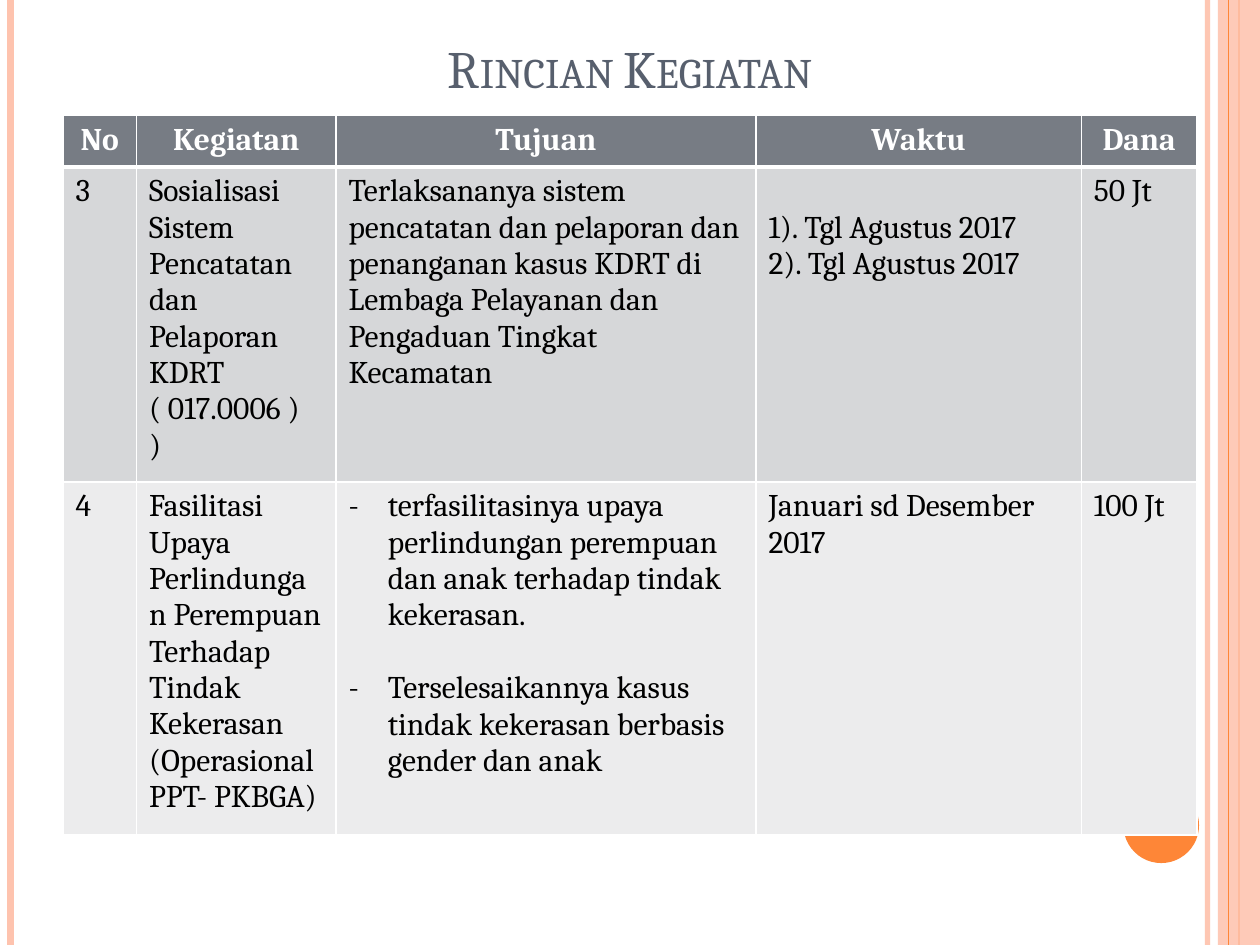
from dataclasses import dataclass

import lxml.etree
import pptx
import pptx.dml.color
import pptx.enum.shapes
import pptx.enum.text
import pptx.oxml.ns
import pptx.util

Pt = pptx.util.Pt
RGBColor = pptx.dml.color.RGBColor
Align = pptx.enum.text.PP_ALIGN
Preset = pptx.enum.shapes.MSO_SHAPE
qn = pptx.oxml.ns.qn

WHITE = RGBColor(0xFF, 0xFF, 0xFF)
BLACK = RGBColor(0, 0, 0)
PEACH = RGBColor(0xFE, 0xC3, 0xAE)
ORANGE = RGBColor(0xFE, 0x86, 0x37)
SLATE = RGBColor(0x57, 0x5F, 0x6D)
HEADER_GREY = RGBColor(0x77, 0x7C, 0x84)
ROW_FILLS = (RGBColor(0xD6, 0xD7, 0xD9), RGBColor(0xEC, 0xEC, 0xED))

FONT = "Cambria"
SLIDE_WIDTH, SLIDE_HEIGHT = 720, 540
TEXT_LINE = 20.8
DASH_INDENT = 22.5
COLUMN_WIDTHS = (42, 114, 240, 186, 66)
ROW_HEIGHTS = (29.5, 173, 194)
HEADERS = ("No", "Kegiatan", "Tujuan", "Waktu", "Dana")


@dataclass
class Stripe:
    x: float
    width: float
    color: RGBColor
    opacity: int = 100


@dataclass
class CellText:
    paragraphs: tuple[str, ...]
    dashed: bool = False
    lines_above: int = 0


OUTER_STRIPES = (
    Stripe(690, 3, PEACH, 93),
    Stripe(6, 4.5, PEACH),
    Stripe(708, 1.5, ORANGE),
)
INNER_STRIPE = Stripe(702, 0.75, ORANGE)

ACTIVITIES = (
    (
        CellText(("3",)),
        CellText(("Sosialisasi Sistem Pencatatan dan", "Pelaporan KDRT ( 017.0006 )", ")")),
        CellText(("Terlaksananya sistem pencatatan dan pelaporan dan penanganan kasus KDRT "
                  "di Lembaga Pelayanan dan Pengaduan Tingkat Kecamatan",)),
        CellText(("1). Tgl Agustus 2017", "2). Tgl Agustus 2017"), lines_above=1),
        CellText(("50 Jt",)),
    ),
    (
        CellText(("4",)),
        CellText(("Fasilitasi Upaya Perlindungan Perempuan Terhadap Tindak Kekerasan "
                  "(Operasional PPT- PKBGA)",)),
        CellText(("terfasilitasinya upaya perlindungan perempuan dan anak terhadap "
                  "tindak kekerasan.",
                  "Terselesaikannya kasus tindak kekerasan berbasis gender dan anak"),
                 dashed=True),
        CellText(("Januari sd Desember 2017",)),
        CellText(("100 Jt",)),
    ),
)


def set_opacity(fill_parent, percent: int) -> None:
    color = fill_parent.find(".//" + qn("a:srgbClr"))
    lxml.etree.SubElement(color, qn("a:alpha"), val=str(percent * 1000))


def add_stripe(slide, stripe: Stripe) -> None:
    line = slide.shapes.add_connector(
        pptx.enum.shapes.MSO_CONNECTOR.STRAIGHT,
        Pt(stripe.x), Pt(0), Pt(stripe.x), Pt(SLIDE_HEIGHT))
    line.line.color.rgb = stripe.color
    line.line.width = Pt(stripe.width)
    properties = line._element.spPr
    if stripe.opacity < 100:
        set_opacity(properties, stripe.opacity)
    lxml.etree.SubElement(properties, qn("a:effectLst"))


def add_plain_shape(slide, preset, left: float, top: float, width: float, height: float,
                    color: RGBColor):
    shape = slide.shapes.add_shape(preset, Pt(left), Pt(top), Pt(width), Pt(height))
    shape.shadow.inherit = False
    shape.fill.solid()
    shape.fill.fore_color.rgb = color
    shape.line.fill.background()
    return shape


def format_paragraph(paragraph, size: float, color: RGBColor, bold: bool = False,
                     alignment=Align.LEFT) -> None:
    paragraph.alignment = alignment
    for run in paragraph.runs:
        run.font.name = FONT
        run.font.size = Pt(size)
        run.font.bold = bold
        run.font.color.rgb = color


def add_title(slide, text: str) -> None:
    box = slide.shapes.add_textbox(Pt(36), Pt(-12), Pt(648), Pt(72))
    frame = box.text_frame
    frame.word_wrap = True
    frame.vertical_anchor = pptx.enum.text.MSO_ANCHOR.BOTTOM
    frame.text = text
    paragraph = frame.paragraphs[0]
    format_paragraph(paragraph, 30, SLATE, alignment=Align.CENTER)
    paragraph.runs[0]._r.get_or_add_rPr().set("cap", "small")


def add_dash(paragraph) -> None:
    properties = paragraph._p.get_or_add_pPr()
    properties.set("marL", str(Pt(DASH_INDENT)))
    properties.set("indent", str(-Pt(DASH_INDENT)))
    lxml.etree.SubElement(properties, qn("a:buFont"), typeface=FONT)
    lxml.etree.SubElement(properties, qn("a:buChar"), char="-")


def style_cell(cell, fill: RGBColor, top_border: float, bottom_border: float) -> None:
    """Draw the white borders, then the fill, in the order the schema asks for."""
    properties = cell._tc.get_or_add_tcPr()
    borders = {"a:lnL": 1, "a:lnR": 1, "a:lnT": top_border, "a:lnB": bottom_border}
    for tag, width in borders.items():
        border = lxml.etree.SubElement(properties, qn(tag), w=str(Pt(width)))
        solid = lxml.etree.SubElement(border, qn("a:solidFill"))
        lxml.etree.SubElement(solid, qn("a:srgbClr"), val=str(WHITE))
    cell.fill.solid()
    cell.fill.fore_color.rgb = fill


def fill_activity_cell(cell, content: CellText) -> None:
    cell.text_frame.text = "\n".join(content.paragraphs)
    cell.margin_top = Pt(3.6 + content.lines_above * TEXT_LINE)
    for index, paragraph in enumerate(cell.text_frame.paragraphs):
        format_paragraph(paragraph, 18, BLACK)
        if content.dashed:
            if index:
                paragraph.space_before = Pt(TEXT_LINE)
            add_dash(paragraph)


def add_activity_table(slide) -> None:
    table = slide.shapes.add_table(
        len(ROW_HEIGHTS), len(COLUMN_WIDTHS), Pt(36), Pt(66),
        Pt(sum(COLUMN_WIDTHS)), Pt(sum(ROW_HEIGHTS))).table
    for column, width in zip(table.columns, COLUMN_WIDTHS):
        column.width = Pt(width)
    for row, height in zip(table.rows, ROW_HEIGHTS):
        row.height = Pt(height)
    for column_index, header in enumerate(HEADERS):
        cell = table.cell(0, column_index)
        style_cell(cell, HEADER_GREY, 1, 3)
        cell.text_frame.text = header
        format_paragraph(cell.text_frame.paragraphs[0], 18, WHITE, True, Align.CENTER)
    for row_index, (activity, fill) in enumerate(zip(ACTIVITIES, ROW_FILLS), start=1):
        for column_index, content in enumerate(activity):
            cell = table.cell(row_index, column_index)
            style_cell(cell, fill, 3 if row_index == 1 else 1, 1)
            fill_activity_cell(cell, content)


def main() -> None:
    presentation = pptx.Presentation()
    presentation.slide_width = Pt(SLIDE_WIDTH)
    presentation.slide_height = Pt(SLIDE_HEIGHT)
    slide = presentation.slides.add_slide(presentation.slide_layouts[6])
    for stripe in OUTER_STRIPES:
        add_stripe(slide, stripe)
    band = add_plain_shape(slide, Preset.RECTANGLE, 696, 0, 24, SLIDE_HEIGHT, PEACH)
    set_opacity(band._element.spPr, 87)
    add_stripe(slide, INNER_STRIPE)
    add_plain_shape(slide, Preset.OVAL, 642, 450, 43.2, 43.2, ORANGE)
    add_title(slide, "Rincian Kegiatan")
    add_activity_table(slide)
    presentation.save("out.pptx")


if __name__ == "__main__":
    main()
